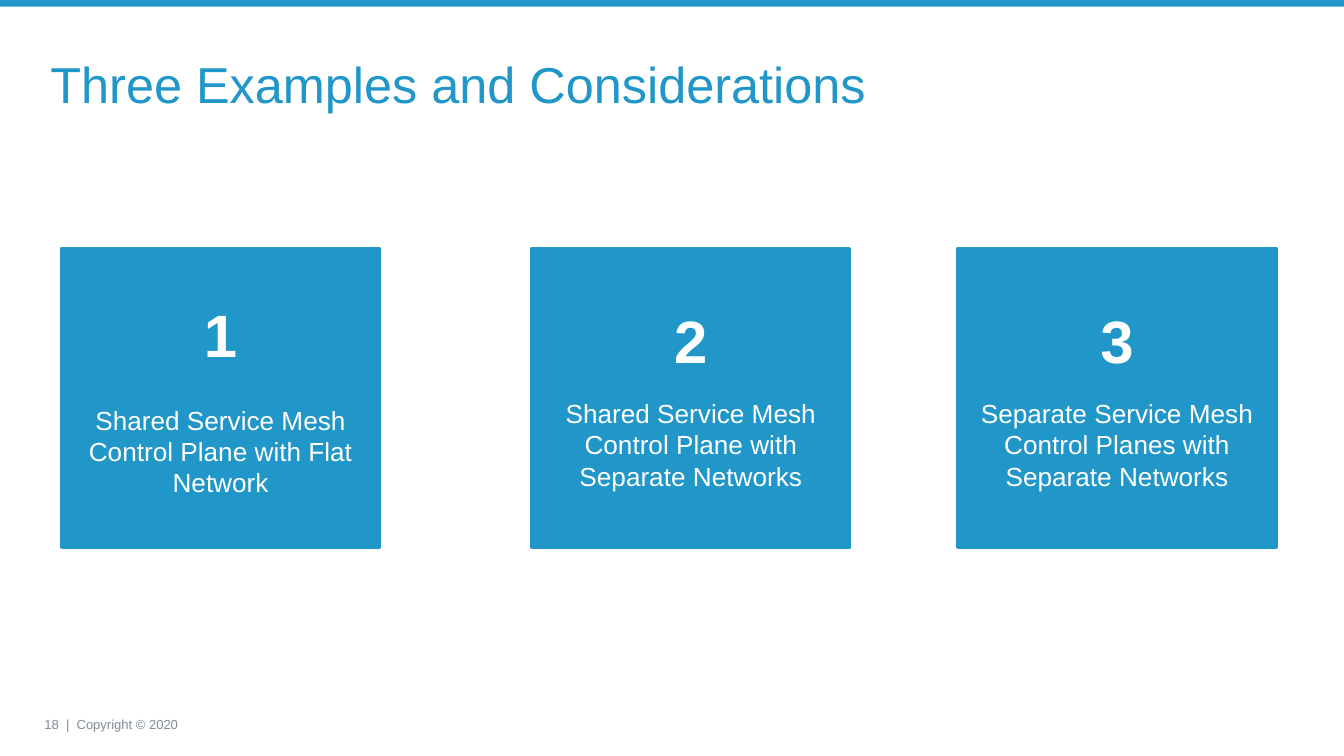
from pptx import Presentation
from pptx.dml.color import RGBColor
from pptx.enum.shapes import MSO_SHAPE
from pptx.enum.text import MSO_ANCHOR, MSO_AUTO_SIZE, PP_ALIGN
from pptx.util import Pt

BLUE = RGBColor(0x21, 0x96, 0xC9)
WHITE = RGBColor(0xFF, 0xFF, 0xFF)
GRAY = RGBColor(0x81, 0x8C, 0x99)
FONT = "Arial"
TITLE_ONLY = 5
CARD_TOP, CARD_W, CARD_H = 133.2, 170, 160
CARDS = [
    (33.2, "1", "Shared Service Mesh Control Plane with Flat Network", 18.4),
    (285.1, "2", "Shared Service Mesh Control Plane with Separate Networks", 11.5),
    (513.4, "3", "Separate Service Mesh Control Planes with Separate Networks", 11.5),
]


def write(p, text, *, size, color, bold=False, align=PP_ALIGN.LEFT, before=0, spacing=1.0):
    """Put formatted text into a paragraph."""
    p.alignment = align
    p.space_before = Pt(before)
    p.line_spacing = spacing
    r = p.add_run()
    r.text = text
    r.font.name = FONT
    r.font.size = Pt(size)
    r.font.bold = bold
    r.font.color.rgb = color


def set_frame(tf, mx, my, anchor):
    """Set the margins, wrapping and anchor of a text frame."""
    tf.word_wrap = True
    tf.auto_size = MSO_AUTO_SIZE.NONE
    tf.margin_left = tf.margin_right = Pt(mx)
    tf.margin_top = tf.margin_bottom = Pt(my)
    tf.vertical_anchor = anchor


def add_block(s, x, y, w, h):
    """Add a plain blue rectangle."""
    sp = s.shapes.add_shape(MSO_SHAPE.RECTANGLE, Pt(x), Pt(y), Pt(w), Pt(h))
    sp.shadow.inherit = False
    sp.fill.solid()
    sp.fill.fore_color.rgb = BLUE
    sp.line.fill.background()
    return sp


def add_title(s, x, y, w, h, text):
    """Place and format the title placeholder."""
    sp = s.shapes.title
    sp.left, sp.top, sp.width, sp.height = Pt(x), Pt(y), Pt(w), Pt(h)
    set_frame(sp.text_frame, 5.4, 2.7, MSO_ANCHOR.MIDDLE)
    write(sp.text_frame.paragraphs[0], text, size=27, color=BLUE, spacing=0.9)


def add_card(s, x, y, w, h, number, text, gap):
    """Add a numbered card with its description."""
    sp = add_block(s, x, y, w, h)
    sp.line.color.rgb = BLUE
    sp.line.width = Pt(2)
    tf = sp.text_frame
    set_frame(tf, 7.2, 3.6, MSO_ANCHOR.MIDDLE)
    write(tf.paragraphs[0], number, size=32, color=WHITE, bold=True, align=PP_ALIGN.CENTER)
    write(tf.add_paragraph(), text, size=14, color=WHITE, align=PP_ALIGN.CENTER, before=gap)


def add_footer(s, x, y, w, h, text):
    """Add the page number and copyright line."""
    tf = s.shapes.add_textbox(Pt(x), Pt(y), Pt(w), Pt(h)).text_frame
    set_frame(tf, 5.4, 2.7, MSO_ANCHOR.TOP)
    write(tf.paragraphs[0], text, size=7, color=GRAY)


def main():
    """Build and save the slide."""
    prs = Presentation()
    prs.slide_width, prs.slide_height = Pt(720), Pt(405)
    s = prs.slides.add_slide(prs.slide_layouts[TITLE_ONLY])
    add_footer(s, 18.4, 380.9, 166, 13.7, "18  |  Copyright © 2020")
    add_block(s, 0, 0, 720, 3.6)
    add_title(s, 21.6, 21.6, 677.5, 49.7, "Three Examples and Considerations")
    for x, number, text, gap in CARDS:
        add_card(s, x, CARD_TOP, CARD_W, CARD_H, number, text, gap)
    prs.save("out.pptx")


if __name__ == "__main__":
    main()
